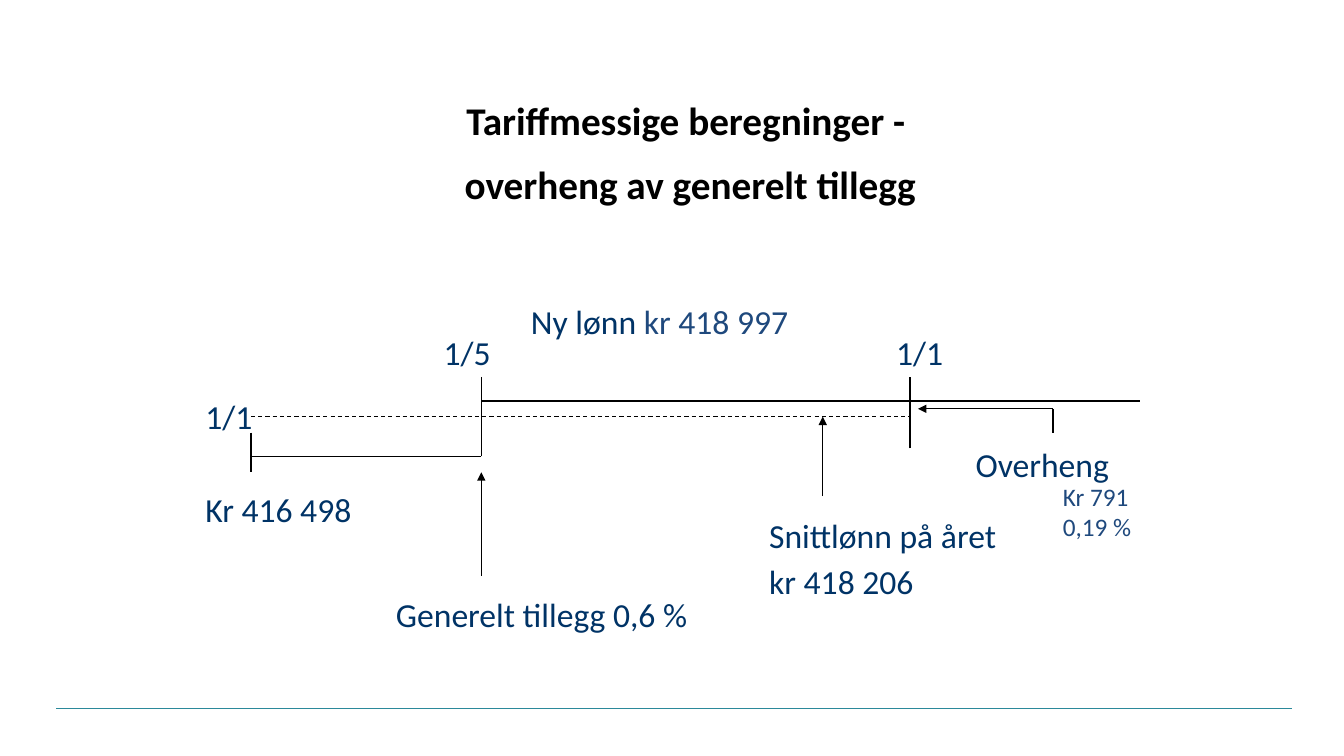
from collections import namedtuple
from dataclasses import dataclass

from lxml import etree
from pptx import Presentation
from pptx.dml.color import RGBColor
from pptx.enum.dml import MSO_LINE
from pptx.enum.shapes import MSO_CONNECTOR
from pptx.enum.text import PP_ALIGN
from pptx.oxml.ns import qn
from pptx.util import Inches, Pt

STRAIGHT = MSO_CONNECTOR.STRAIGHT
CENTER = PP_ALIGN.CENTER
DASH = MSO_LINE.DASH

Box = namedtuple("Box", "left top width height")


@dataclass(frozen=True)
class Theme:
    font: str = "Calibri"
    black: str = "000000"
    navy: str = "003366"
    blue: str = "1F497D"
    teal: str = "2B899A"
    title_size: int = 28
    label_size: int = 24
    note_size: int = 18
    label_spacing: int = 33
    title_gap: int = 12
    line_width: float = 1
    thin_width: float = 0.75


THEME = Theme()

SLIDE = Box(0, 0, 13.33, 7.5)
TITLE = Box(2.22, 0.91, 9.25, 1.42)
TIMELINE = Box(2.49, 3.74, 8.82, 1.97)
FOOTER = Box(0.56, 7.03, 12.25, 0)

# Timeline grid: columns of the key dates and rows of the salary levels
COLUMNS, ROWS = 112, 25
YEAR_START, RAISE, AVERAGE, YEAR_END, CARRY, END = 0, 29, 72, 83, 101, 112
NEW_PAY, CARRY_ROW, AVERAGE_PAY, OLD_PAY = 3, 4, 5, 10


def add_line(page, start, end, color=THEME.black, width=THEME.line_width,
             dash=None, arrow=False):
    points = [Inches(value) for value in (*start, *end)]
    line = page.shapes.add_connector(STRAIGHT, *points)
    line.line.color.rgb = RGBColor.from_string(color)
    line.line.width = Pt(width)
    if dash:
        line.line.dash_style = dash
    if arrow:
        etree.SubElement(line.line._get_or_add_ln(), qn("a:tailEnd"), type="triangle")
    etree.SubElement(line._element.spPr, qn("a:effectLst"))


def add_text(page, box, paragraphs, size, bold=False, align=None,
             spacing=None, gap=0):
    """Each paragraph is a list of (text, color) runs; None is a line break."""
    frame = page.shapes.add_textbox(*map(Inches, box)).text_frame
    frame.word_wrap = True
    for index, runs in enumerate(paragraphs):
        para = frame.add_paragraph() if index else frame.paragraphs[0]
        para.alignment = align
        if spacing:
            para.line_spacing = Pt(spacing)
        if index:
            para.space_before = Pt(gap)
        for run in runs:
            if run is None:
                para.add_line_break()
                continue
            span = para.add_run()
            span.text, color = run
            span.font.name = THEME.font
            span.font.size = Pt(size)
            span.font.bold = bold
            span.font.color.rgb = RGBColor.from_string(color)


def add_title(page, box):
    lines = ("Tariffmessige beregninger - ", "overheng av generelt tillegg")
    add_text(page, box, [[(line, THEME.black)] for line in lines],
             THEME.title_size, bold=True, align=CENTER, gap=THEME.title_gap)


def add_timeline(page, box):
    column, row = box.width / COLUMNS, box.height / ROWS

    def point(x, y):
        return box.left + x * column, box.top + y * row

    def cell(x, y, width, height):
        return Box(*point(x, y), width * column, height * row)

    # Salary levels, date marks and the carry-over bracket
    for start, end in (
        ((YEAR_START, OLD_PAY), (RAISE, OLD_PAY)),
        ((RAISE, OLD_PAY), (RAISE, NEW_PAY)),
        ((RAISE, NEW_PAY), (YEAR_END, NEW_PAY)),
        ((YEAR_END, NEW_PAY), (END, NEW_PAY)),
        ((YEAR_START, 7), (YEAR_START, 12)),
        ((RAISE, 0), (RAISE, NEW_PAY)),
        ((YEAR_END, 9), (YEAR_END, 0)),
        ((CARRY, CARRY_ROW), (CARRY, 7)),
    ):
        add_line(page, point(*start), point(*end))

    # Average salary over the year
    add_line(page, point(YEAR_START, AVERAGE_PAY), point(YEAR_END, AVERAGE_PAY),
             width=THEME.thin_width, dash=DASH)

    # Arrows from the explanations
    for start, end in (
        ((RAISE, ROWS), (RAISE, 12)),
        ((AVERAGE, 15), (AVERAGE, AVERAGE_PAY)),
        ((CARRY, CARRY_ROW), (YEAR_END + 1, CARRY_ROW)),
    ):
        add_line(page, point(*start), point(*end), arrow=True)

    # Labels with fixed line spacing
    navy, blue = THEME.navy, THEME.blue
    for place, runs in (
        ((-7, 1, 14, 7), [("1/1", navy)]),
        ((23, -7, 10, 7), [("1/5", navy)]),
        ((80, -7, 12, 7), [("1/1", navy)]),
        ((34, -11, 50, 7), [("Ny lønn ", navy), ("kr 418 997", blue)]),
        ((17, 26, 45, 7), [("Generelt tillegg 0,6 %", navy)]),
        ((64, 16, 39, 13),
         [("Snittlønn på året", navy), None, ("kr 418 206", navy)]),
        ((90, 7, 24, 7), [("Overheng", navy)]),
    ):
        add_text(page, cell(*place), [runs], THEME.label_size,
                 spacing=THEME.label_spacing)

    # Amounts with single line spacing
    add_text(page, cell(-7, 13.5, 37, 11.5), [[("Kr 416 498", navy)]],
             THEME.label_size)
    add_text(page, cell(CARRY, 12.5, 22, 9),
             [[("Kr 791", blue)], [("0,19 %", blue)]], THEME.note_size)


def add_footer(page, box):
    add_line(page, (box.left, box.top), (box.left + box.width, box.top),
             color=THEME.teal)


def main():
    deck = Presentation()
    deck.slide_width, deck.slide_height = Inches(SLIDE.width), Inches(SLIDE.height)
    page = deck.slides.add_slide(deck.slide_layouts[6])
    add_footer(page, FOOTER)
    add_title(page, TITLE)
    add_timeline(page, TIMELINE)
    deck.save("out.pptx")


if __name__ == "__main__":
    main()
